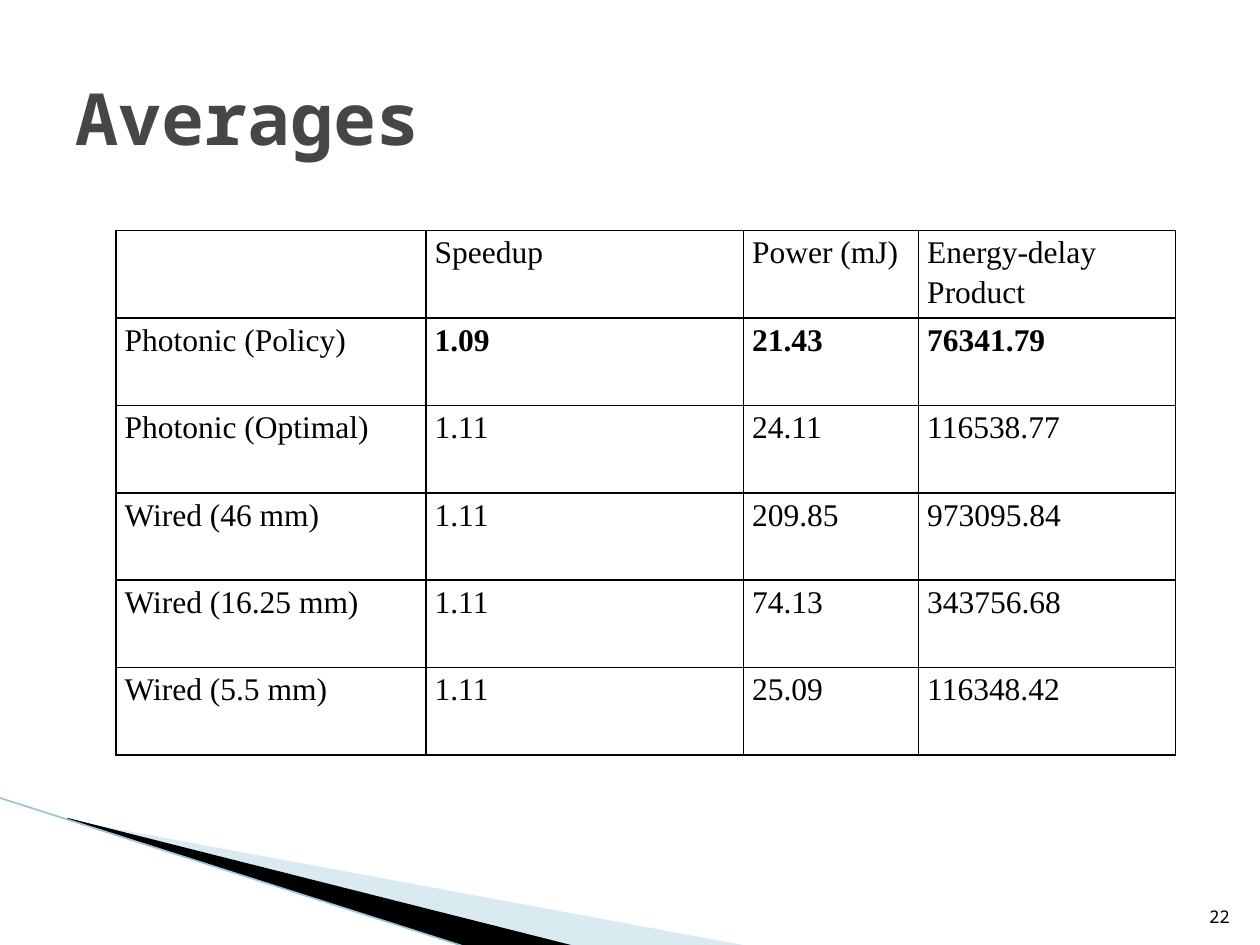
from dataclasses import dataclass

from lxml import etree
from pptx import Presentation
from pptx.dml.color import RGBColor
from pptx.enum.text import MSO_ANCHOR, PP_ALIGN
from pptx.oxml.ns import qn
from pptx.util import Inches, Pt

LEFT, RIGHT = PP_ALIGN.LEFT, PP_ALIGN.RIGHT
TOP, MIDDLE, BOTTOM = MSO_ANCHOR.TOP, MSO_ANCHOR.MIDDLE, MSO_ANCHOR.BOTTOM
TITLE_ONLY = 5
WIDTH, HEIGHT = Inches(10), Inches(7.5)
COLUMNS, ROWS = 100, 75


@dataclass(frozen=True)
class Theme:
    heading_font: str = "Noto Sans Mono"
    table_font: str = "Times New Roman"
    heading: str = "464646"
    ink: str = "000000"
    pale_wedge: str = "A0CBDC"
    edge: str = "97C5D8"
    paper: str = "FFFFFF"
    heading_size: float = 41
    table_size: float = 18
    number_size: float = 10
    border: float = 1
    edge_width: float = 0.95


@dataclass(frozen=True)
class Area:
    column: float
    row: float
    columns: float
    rows: float

    def lengths(self) -> tuple[int, int, int, int]:
        return across(self.column), down(self.row), across(self.columns), down(self.rows)


@dataclass(frozen=True)
class Wedge:
    points: tuple[tuple[float, float], ...]
    color: str
    opacity: int = 100


@dataclass(frozen=True)
class Result:
    system: str
    speedup: str
    power: str
    energy_delay: str
    bold: bool = False

    def values(self) -> tuple[str, ...]:
        return self.system, self.speedup, self.power, self.energy_delay


THEME = Theme()
WEDGES = (
    Wedge(((5.5, 65.1), (59.5, 75.1), (45.6, 75.1), (5.5, 65)), THEME.pale_wedge, 40),
    Wedge(((5.3, 64.9), (45.7, 75.1), (37.2, 75.2), (5.4, 65)), THEME.ink),
)
RESULTS = (
    Result("", "Speedup", "Power (mJ)", "Energy-delay Product"),
    Result("Photonic (Policy)", "1.09", "21.43", "76341.79", bold=True),
    Result("Photonic (Optimal)", "1.11", "24.11", "116538.77"),
    Result("Wired (46 mm)", "1.11", "209.85", "973095.84"),
    Result("Wired (16.25 mm)", "1.11", "74.13", "343756.68"),
    Result("Wired (5.5 mm)", "1.11", "25.09", "116348.42"),
)
RESULT_COLUMNS = (24.6, 25.2, 13.9, 20.4)
RESULT_ROW = 6.94


def across(columns: float) -> int:
    return round(WIDTH * columns / COLUMNS)


def down(rows: float) -> int:
    return round(HEIGHT * rows / ROWS)


def write(frame, text: str, *, font: str, size: float, color: str, bold: bool = False,
          align=LEFT, anchor=TOP, spacing: float = 1.0) -> None:
    frame.word_wrap = True
    frame.vertical_anchor = anchor
    paragraph = frame.paragraphs[0]
    paragraph.text = text
    paragraph.alignment = align
    paragraph.line_spacing = spacing
    for face in (paragraph.font, *(run.font for run in paragraph.runs)):
        face.name = font
        face.size = Pt(size)
        face.bold = bold
        face.color.rgb = RGBColor.from_string(color)


def draw_wedge(slide, wedge: Wedge) -> None:
    start, *others = [(across(x), down(y)) for x, y in wedge.points]
    builder = slide.shapes.build_freeform(*start)
    builder.add_line_segments(others, close=True)
    shape = builder.convert_to_shape()
    shape.shadow.inherit = False
    shape.line.fill.background()
    shape.fill.solid()
    shape.fill.fore_color.rgb = RGBColor.from_string(wedge.color)
    if wedge.opacity < 100:
        color = shape.fill._xPr.find(f"{qn('a:solidFill')}/{qn('a:srgbClr')}")
        etree.SubElement(color, qn("a:alpha"), val=str(wedge.opacity * 1000))


def draw_edge(slide, start: tuple[float, float], end: tuple[float, float]) -> None:
    edge = slide.shapes.add_connector(
        1, across(start[0]), down(start[1]), across(end[0]), down(end[1]))
    edge.line.color.rgb = RGBColor.from_string(THEME.edge)
    edge.line.width = Pt(THEME.edge_width)
    etree.SubElement(edge._element.spPr, qn("a:effectLst"))


def border_cell(cell) -> None:
    properties = cell._tc.get_or_add_tcPr()
    for position, side in enumerate(("lnL", "lnR", "lnT", "lnB")):
        border = etree.Element(qn(f"a:{side}"), w=str(Pt(THEME.border)))
        fill = etree.SubElement(border, qn("a:solidFill"))
        etree.SubElement(fill, qn("a:srgbClr"), val=THEME.ink)
        properties.insert(position, border)


def draw_results(slide, results: tuple[Result, ...]) -> None:
    area = Area(9.2, 18.3, sum(RESULT_COLUMNS), RESULT_ROW * len(results))
    table = slide.shapes.add_table(
        len(results), len(RESULT_COLUMNS), *area.lengths()).table
    table.first_row = table.horz_banding = False
    for column, width in zip(table.columns, RESULT_COLUMNS):
        column.width = across(width)
    for row, result in zip(table.rows, results):
        row.height = down(RESULT_ROW)
        for index, (cell, value) in enumerate(zip(row.cells, result.values())):
            cell.margin_left = cell.margin_right = across(0.7)
            cell.margin_top = cell.margin_bottom = 0
            cell.fill.solid()
            cell.fill.fore_color.rgb = RGBColor.from_string(THEME.paper)
            border_cell(cell)
            write(cell.text_frame, value, font=THEME.table_font, size=THEME.table_size,
                  color=THEME.ink, bold=result.bold and index > 0, spacing=1.15)


def main() -> None:
    deck = Presentation()
    deck.slide_width, deck.slide_height = WIDTH, HEIGHT
    slide = deck.slides.add_slide(deck.slide_layouts[TITLE_ONLY])

    for wedge in WEDGES:
        draw_wedge(slide, wedge)
    draw_edge(slide, (-0.1, 63.3), (37.1, 75.2))

    number = slide.shapes.add_textbox(*Area(94.6, 70.1, 4, 4).lengths())
    write(number.text_frame, "22", font=THEME.heading_font, size=THEME.number_size,
          color=THEME.ink, align=RIGHT, anchor=BOTTOM)

    heading = slide.shapes.title
    heading.left, heading.top, heading.width, heading.height = Area(5, 3, 90, 12.5).lengths()
    write(heading.text_frame, "Averages", font=THEME.heading_font, size=THEME.heading_size,
          color=THEME.heading, bold=True, anchor=MIDDLE)

    draw_results(slide, RESULTS)
    deck.save("out.pptx")


if __name__ == "__main__":
    main()
